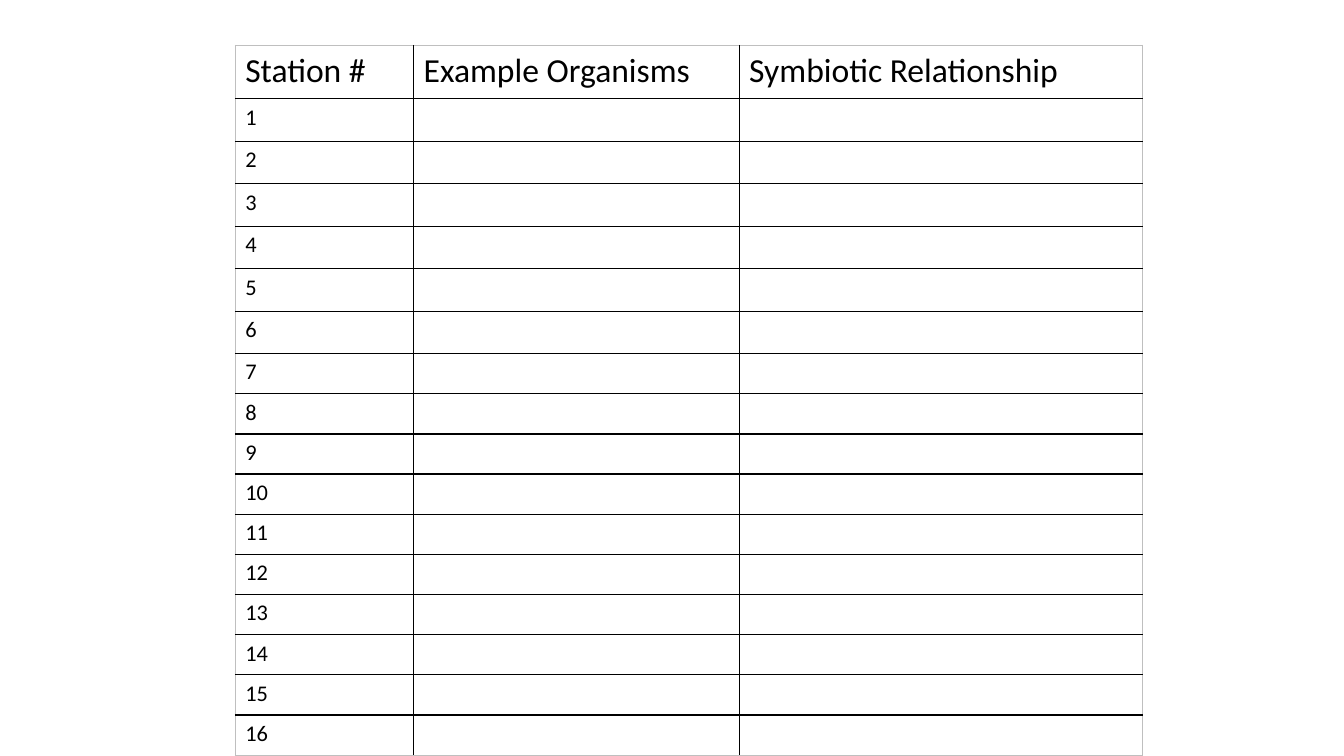
from lxml import etree
from pptx import Presentation
from pptx.dml.color import RGBColor
from pptx.oxml.ns import qn
from pptx.util import Pt

COLORS = {"text": "000000", "grid": "000000", "frame": "BFBFBF", "cell": "FFFFFF"}
FONT = "Calibri"
HEADINGS = ["Station #", "Example Organisms", "Symbiotic Relationship"]
STATION_COUNT = 16
COLUMN_SHARES = [1.77, 3.23, 4]
HEADER_HEIGHT = 38.4
ROW_HEIGHTS = [30.35] * 6 + [28.7] * 10
HEADER_SIZE, BODY_SIZE = 24, 16


def add_border(cell, side, color, width):
    properties = cell._tc.get_or_add_tcPr()
    line = etree.SubElement(properties, qn(f"a:ln{side}"), w=str(Pt(width)))
    fill = etree.SubElement(line, qn("a:solidFill"))
    etree.SubElement(fill, qn("a:srgbClr"), val=color)


def format_cell(cell, text, size, outer_sides):
    # Black inner grid, pale outer frame
    for side in "LRTB":
        if side in outer_sides:
            add_border(cell, side, COLORS["frame"], 0.5)
        else:
            add_border(cell, side, COLORS["grid"], 1)
    cell.fill.solid()
    cell.fill.fore_color.rgb = RGBColor.from_string(COLORS["cell"])

    # Empty cells keep the text size so that rows do not grow
    paragraph = cell.text_frame.paragraphs[0]
    if not text:
        etree.SubElement(paragraph._p, qn("a:endParaRPr"), sz=str(size * 100))
        return
    paragraph.text = text
    font = paragraph.runs[0].font
    font.name, font.size, font.bold = FONT, Pt(size), False
    font.color.rgb = RGBColor.from_string(COLORS["text"])


def add_station_table(slide, left, top, width, height):
    rows = [HEADINGS] + [[str(number), "", ""] for number in range(1, STATION_COUNT + 1)]
    last_row, last_column = len(rows) - 1, len(HEADINGS) - 1
    frame = slide.shapes.add_table(
        len(rows), len(HEADINGS), Pt(left), Pt(top), Pt(width), Pt(height))
    table = frame.table
    table.horz_banding = False

    # Column and row sizes
    for column, share in zip(table.columns, COLUMN_SHARES):
        column.width = Pt(width * share / sum(COLUMN_SHARES))
    for row, row_height in zip(table.rows, [HEADER_HEIGHT] + ROW_HEIGHTS):
        row.height = Pt(row_height)

    # Cells
    for row_index, texts in enumerate(rows):
        size = BODY_SIZE if row_index else HEADER_SIZE
        for column_index, text in enumerate(texts):
            edges = {"L": column_index == 0, "R": column_index == last_column,
                     "T": row_index == 0, "B": row_index == last_row}
            outer_sides = [side for side, is_outer in edges.items() if is_outer]
            format_cell(table.cell(row_index, column_index), text, size, outer_sides)


def main():
    presentation = Presentation()
    presentation.slide_width, presentation.slide_height = Pt(960), Pt(540)
    slide = presentation.slides.add_slide(presentation.slide_layouts[6])
    add_station_table(slide, 168, 32.2, 648, 507.5)
    presentation.save("out.pptx")


if __name__ == "__main__":
    main()
